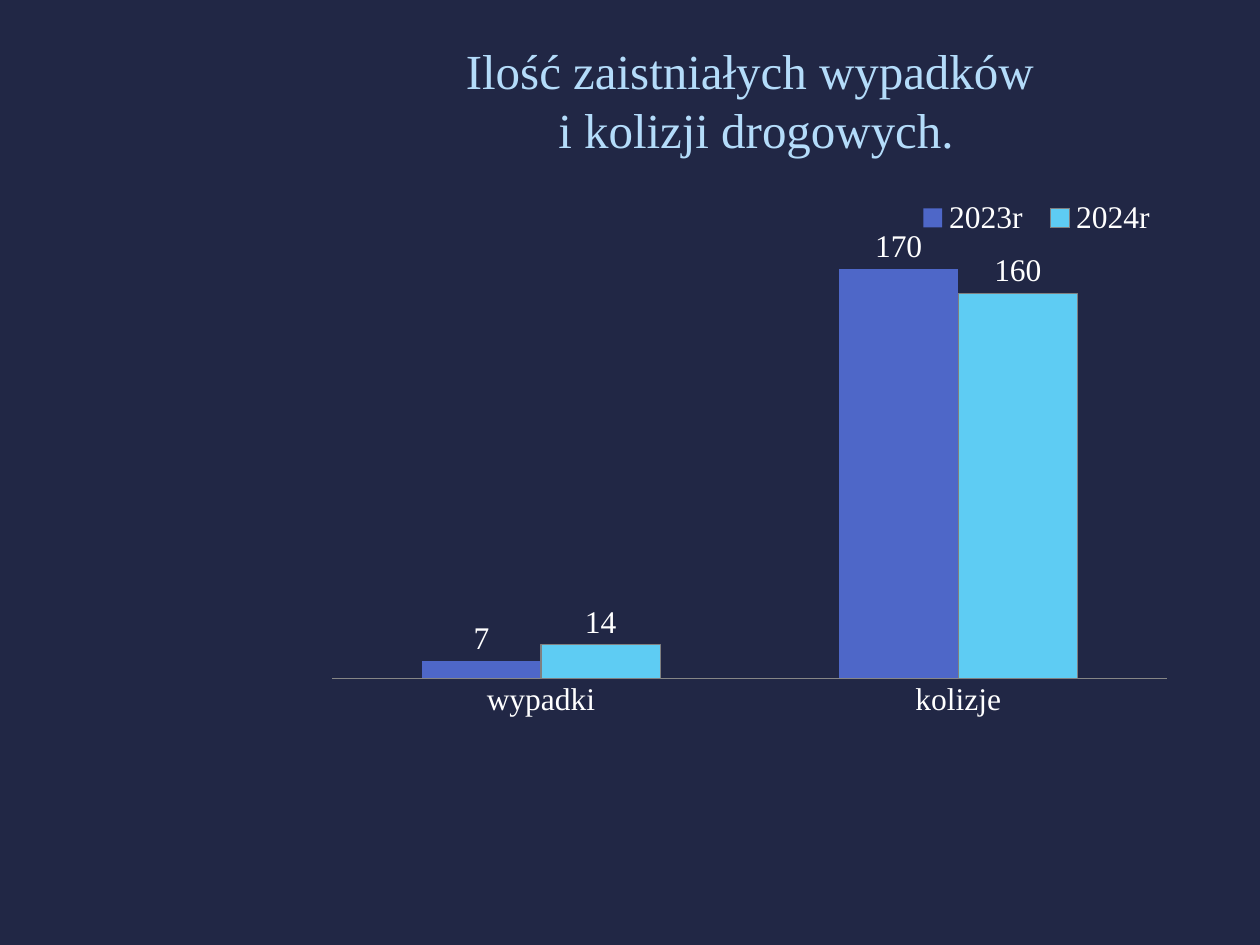
"""Build a slide comparing road accidents and collisions in two years."""
from dataclasses import dataclass

from lxml import etree
from pptx import Presentation, util as u
from pptx.chart import data as chart_data
from pptx.dml.color import RGBColor
from pptx.enum import chart as ch, text
from pptx.oxml import ns

TITLE = "Ilość zaistniałych wypadków \vi kolizji drogowych."
CATEGORIES = ("wypadki", "kolizje")
SERIES = (
    {"name": "2023r", "values": (7, 170), "fill": "4E67C8", "line": None},
    {"name": "2024r", "values": (14, 160), "fill": "5ECCF3", "line": "808080"},
)
SIZE = (10, 7.5)
TITLE_BOX = (0.24, 0.03, 0.72, 0.15)
CHART_BOX = (0.25, 0.19, 0.69, 0.58)
PLOT_SHARE = {"x": 0.02, "y": 0.12, "w": 0.96, "h": 0.79}
LEGEND_SHARE = {"x": 0.68, "y": 0.03, "w": 0.3, "h": 0.08}


@dataclass(frozen=True)
class Theme:
    font: str = "Times New Roman"
    background: str = "212745"
    title: str = "B4DCFA"
    label: str = "FFFFFF"
    axis: str = "868686"
    title_size: int = 28
    label_size: int = 18


THEME = Theme()


def place(box):
    return [u.Inches(share * SIZE[index % 2]) for index, share in enumerate(box)]


def style_font(font, size, color):
    font.name = THEME.font
    font.size = u.Pt(size)
    font.bold = False
    font.color.rgb = RGBColor.from_string(color)


def set_layout(parent, shares, before, inner=False):
    """Give a chart part a fixed place, as shares of the chart."""
    for old in parent.findall(ns.qn("c:layout")):
        parent.remove(old)
    layout = etree.Element(ns.qn("c:layout"))
    manual = etree.SubElement(layout, ns.qn("c:manualLayout"))
    settings = {"layoutTarget": "inner"} if inner else {}
    settings.update(xMode="edge", yMode="edge", **shares)
    for tag, value in settings.items():
        etree.SubElement(manual, ns.qn(f"c:{tag}")).set("val", str(value))
    parent.find(ns.qn(before)).addprevious(layout)


def add_title(slide):
    title = slide.shapes.title
    title.left, title.top, title.width, title.height = place(TITLE_BOX)
    frame = title.text_frame
    frame.text = TITLE
    frame.word_wrap = True
    frame.vertical_anchor = text.MSO_ANCHOR.MIDDLE
    para = frame.paragraphs[0]
    para.alignment = text.PP_ALIGN.CENTER
    style_font(para.font, THEME.title_size, THEME.title)


def add_column_chart(slide):
    data = chart_data.CategoryChartData()
    data.categories = CATEGORIES
    for row in SERIES:
        data.add_series(row["name"], row["values"])
    chart = slide.shapes.add_chart(
        ch.XL_CHART_TYPE.COLUMN_CLUSTERED, *place(CHART_BOX), data).chart
    style_font(chart.font, THEME.label_size, THEME.label)
    chart.has_title = False

    chart.has_legend = True
    legend = chart.legend
    legend.position = ch.XL_LEGEND_POSITION.TOP
    legend.include_in_layout = False
    set_layout(legend._element, LEGEND_SHARE, "c:overlay")

    axis = chart.category_axis
    axis.major_tick_mark = ch.XL_TICK_MARK.NONE
    axis.format.line.color.rgb = RGBColor.from_string(THEME.axis)
    axis.format.line.width = u.Pt(0.75)
    chart.value_axis.minimum_scale = 0
    chart.value_axis.maximum_scale = 180
    chart.value_axis.has_major_gridlines = False
    chart.value_axis.visible = False

    plot = chart.plots[0]
    plot.gap_width = 150
    plot.overlap = 0
    plot.vary_by_categories = False
    set_layout(plot._element.getparent(), PLOT_SHARE, "c:barChart", inner=True)
    for series, row in zip(plot.series, SERIES):
        series.format.fill.solid()
        series.format.fill.fore_color.rgb = RGBColor.from_string(row["fill"])
        if row["line"]:
            series.format.line.color.rgb = RGBColor.from_string(row["line"])
            series.format.line.width = u.Pt(0.75)
        else:
            series.format.line.fill.background()
        labels = series.data_labels
        labels.show_value = True
        labels.position = ch.XL_LABEL_POSITION.OUTSIDE_END
        style_font(labels.font, THEME.label_size, THEME.label)


def main():
    deck = Presentation()
    deck.slide_width, deck.slide_height = map(u.Inches, SIZE)
    slide = deck.slides.add_slide(deck.slide_layouts[5])
    slide.background.fill.solid()
    slide.background.fill.fore_color.rgb = RGBColor.from_string(THEME.background)
    add_title(slide)
    add_column_chart(slide)
    deck.save("out.pptx")


if __name__ == "__main__":
    main()
